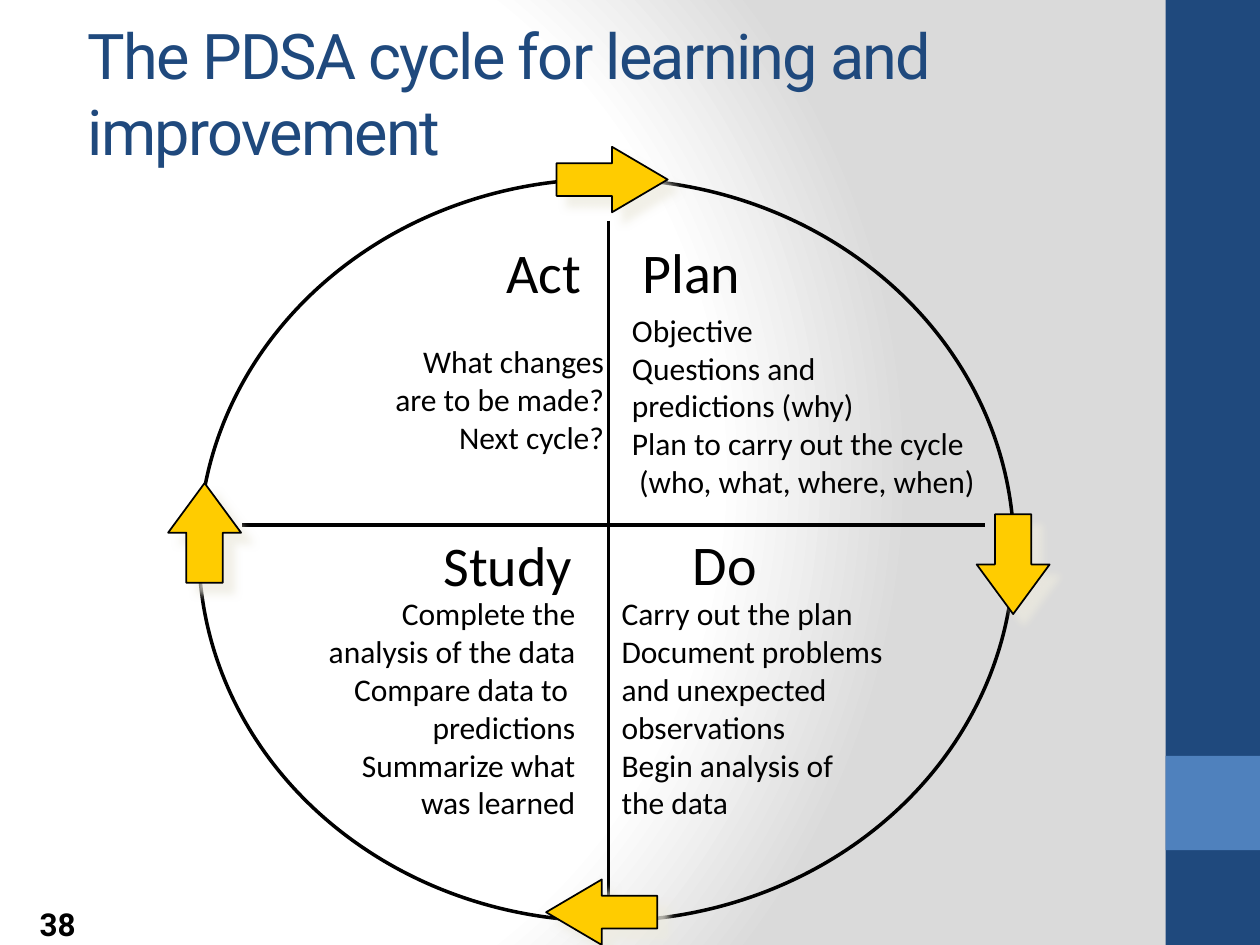
from lxml import etree
from pptx import Presentation
from pptx.dml.color import RGBColor as RGB
from pptx.enum.shapes import MSO_CONNECTOR as LineKind, MSO_SHAPE as Shape
from pptx.enum.text import MSO_ANCHOR as Anchor, MSO_AUTO_SIZE as AutoSize, PP_ALIGN as Align
from pptx.oxml import parse_xml
from pptx.oxml.ns import nsdecls, qn
from pptx.util import Cm, Pt

COLORS = {
    "navy": "1F497D", "blue": "4F81BD", "black": "000000", "white": "FFFFFF",
    "gray": "DADADA", "yellow": "FFCC00", "shade": "EEECE1",
}
FORMATS = {
    "title": {"name": "Roboto", "size": Pt(36)},
    "number": {"name": "Roboto", "size": Pt(18), "bold": True},
    "heading": {"name": "Calibri", "size": Pt(32)},
    "body": {"name": "Calibri", "size": Pt(18)},
}


def rgb(color):
    return RGB.from_string(COLORS[color])


class CycleSlide:
    def __init__(self, deck):
        self.slide = deck.slides.add_slide(deck.slide_layouts[6])
        self.shapes = self.slide.shapes

    def background(self, stops):
        """Radial gradient that starts left of the middle."""
        fill = self.slide.background.fill
        fill.gradient()
        old = self.slide._element.find(".//" + qn("a:gradFill"))
        marks = "".join(
            f'<a:gs pos="{pos * 1000}"><a:srgbClr val="{COLORS[color]}"/></a:gs>'
            for pos, color in stops)
        old.getparent().replace(old, parse_xml(
            f'<a:gradFill {nsdecls("a")} rotWithShape="1"><a:gsLst>{marks}</a:gsLst>'
            '<a:path path="circle"><a:fillToRect l="20000" t="50000" r="100000" b="50000"/>'
            '</a:path></a:gradFill>'))

    def shape(self, kind, box, fill=None, line=None, width=1):
        item = self.shapes.add_shape(kind, *map(Cm, box))
        item.shadow.inherit = False
        if fill:
            item.fill.solid()
            item.fill.fore_color.rgb = rgb(fill)
        else:
            item.fill.background()
        if line:
            item.line.color.rgb = rgb(line)
            item.line.width = Pt(width)
        else:
            item.line.fill.background()
        return item

    def arrow(self, kind, box, head):
        item = self.shape(kind, box, "yellow", "black")
        item.adjustments[0], item.adjustments[1] = 0.5, head
        effects = item._element.spPr.find(qn("a:effectLst"))
        effects.append(parse_xml(
            f'<a:outerShdw {nsdecls("a")} blurRad="{Pt(5)}" dist="{Pt(8.5)}" dir="2700000" '
            f'rotWithShape="0"><a:srgbClr val="{COLORS["shade"]}"><a:alpha val="75000"/>'
            '</a:srgbClr></a:outerShdw>'))

    def line(self, *ends):
        item = self.shapes.add_connector(LineKind.STRAIGHT, *map(Cm, ends))
        item.line.color.rgb = rgb("black")
        item.line.width = Pt(2)
        etree.SubElement(item._element.spPr, qn("a:effectLst"))

    def fill_text(self, frame, lines, style, color="black", align=Align.LEFT):
        for index, words in enumerate(lines):
            paragraph = frame.add_paragraph() if index else frame.paragraphs[0]
            paragraph.alignment = align
            run = paragraph.add_run()
            run.text = words
            run.font.color.rgb = rgb(color)
            for name, value in FORMATS[style].items():
                setattr(run.font, name, value)

    def text(self, box, lines, style, align=Align.LEFT, wrap=False):
        frame = self.shapes.add_textbox(*map(Cm, box)).text_frame
        frame.word_wrap = wrap
        frame.auto_size = AutoSize.SHAPE_TO_FIT_TEXT
        self.fill_text(frame, lines, style, align=align)

    def title(self, box, words):
        frame = self.shapes.add_textbox(*map(Cm, box)).text_frame
        frame.word_wrap = True
        frame.vertical_anchor = Anchor.MIDDLE
        self.fill_text(frame, [words], "title", "navy")
        frame.paragraphs[0].runs[0].font._element.set("spc", "-100")

    def number(self, box, words):
        frame = self.shape(Shape.RECTANGLE, box, line="white", width=1.5).text_frame
        frame.vertical_anchor = Anchor.MIDDLE
        for side in ("left", "top", "right", "bottom"):
            setattr(frame, f"margin_{side}", 0)
        self.fill_text(frame, [words], "number", align=Align.CENTER)


def main():
    deck = Presentation()
    deck.slide_width, deck.slide_height = Cm(25.4), Cm(19.05)
    page = CycleSlide(deck)

    # Backdrop, side band and slide number
    page.background([(0, "white"), (75, "white"), (100, "gray")])
    page.shape(Shape.RECTANGLE, (23.5, 0, 1.9, 19.05), "navy")
    page.shape(Shape.RECTANGLE, (23.5, 15.24, 1.9, 1.9), "blue")
    page.number((0.43, 18.2, 1.47, 0.85), "38")

    # Wheel and its quarters
    page.shape(Shape.OVAL, (4.01, 3.61, 16.43, 14.96), line="black", width=2)
    page.line(12.27, 4.45, 12.27, 18.59)
    page.line(4.88, 10.58, 19.86, 10.58)

    # Arrows around the wheel
    across, upright = (2.24, 1.32), (1.47, 2.01)
    for kind, corner, size, head in (
        (Shape.RIGHT_ARROW, (11.22, 2.96), across, 0.85),
        (Shape.LEFT_ARROW, (11.01, 17.73), across, 0.85),
        (Shape.DOWN_ARROW, (19.69, 10.37), upright, 0.68),
        (Shape.UP_ARROW, (3.39, 9.74), upright, 0.68),
    ):
        page.arrow(kind, corner + size, head)

    # Steps: heading box, heading, body box, lines, alignment, wrapping
    steps = (
        ((9.96, 4.66, 2.34, 1.6), "Act", (6.77, 6.77, 5.66, 2.54),
         ["What changes", "are to be made?", "Next cycle?"], Align.RIGHT, False),
        ((12.7, 4.66, 2.9, 1.6), "Plan", (12.49, 6.14, 8.1, 4.06),
         ["Objective", "Questions and", "predictions (why)",
          "Plan to carry out the cycle", " (who, what, where, when)"], Align.LEFT, False),
        ((8.69, 10.58, 3.63, 1.6), "Study", (4.66, 11.86, 7.19, 4.95),
         ["Complete the", "analysis of the data", "Compare data to ", "predictions",
          "Summarize what", "was learned"], Align.RIGHT, True),
        ((13.72, 10.54, 2.01, 1.6), "Do", (12.28, 11.86, 6.35, 4.88),
         ["Carry out the plan", "Document problems", "and unexpected", "observations",
          "Begin analysis of", "the data"], Align.LEFT, True),
    )
    for heading_box, heading, body_box, lines, align, wrap in steps:
        page.text(heading_box, [heading], "heading")
        page.text(body_box, lines, "body", align, wrap)

    # Title
    page.title((1.52, 0, 21.95, 3.73), "The PDSA cycle for learning and improvement")

    deck.save("out.pptx")


if __name__ == "__main__":
    main()
